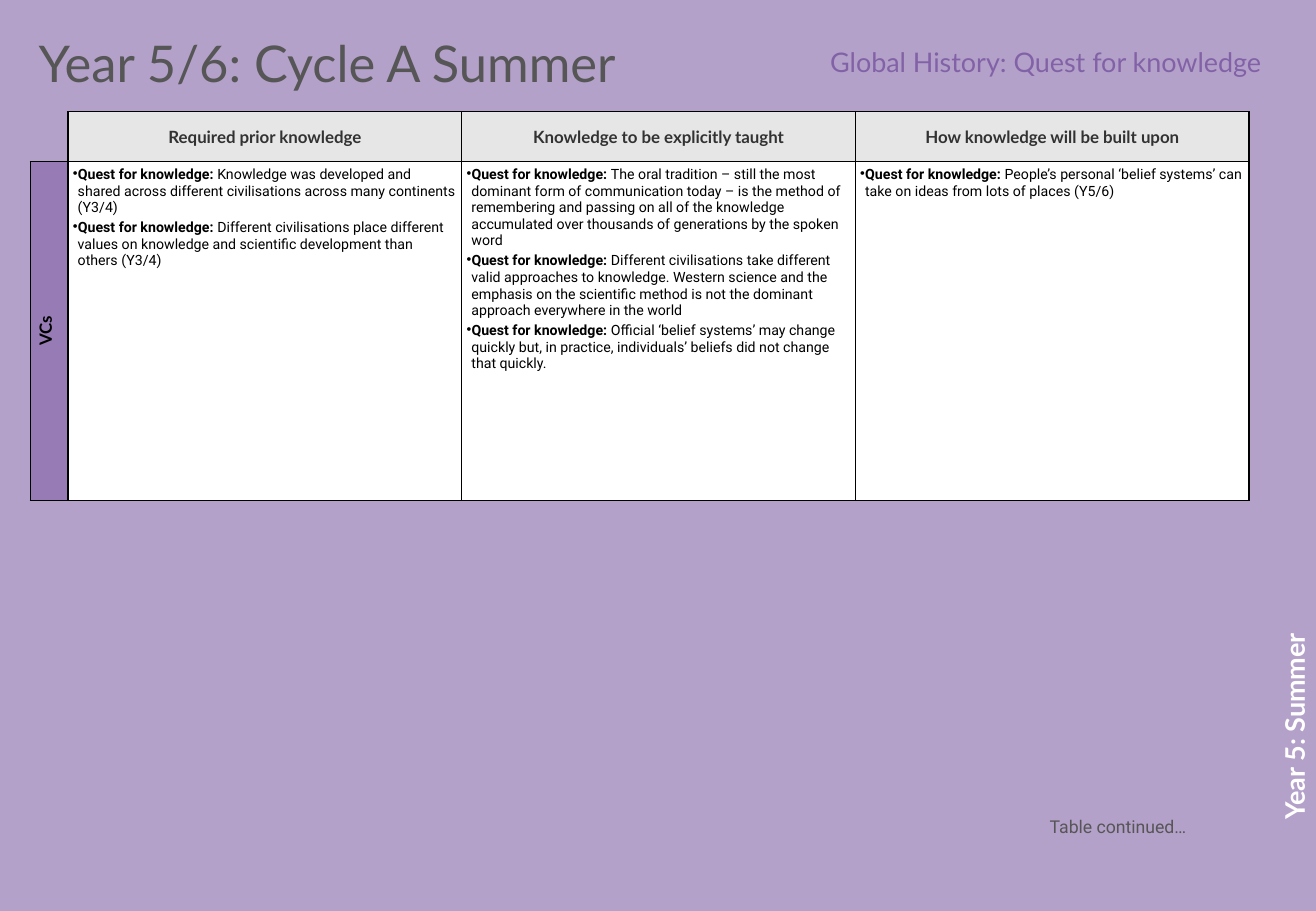
"""Build a curriculum slide with a knowledge table."""
from dataclasses import dataclass

import lxml.etree
import pptx
import pptx.dml.color
import pptx.enum.text
import pptx.oxml.ns
import pptx.util

Inches = pptx.util.Inches
Pt = pptx.util.Pt
Align = pptx.enum.text.PP_ALIGN
Anchor = pptx.enum.text.MSO_ANCHOR
qn = pptx.oxml.ns.qn


@dataclass(frozen=True)
class Theme:
    back: str = "B4A1CA"
    grey: str = "565656"
    dark: str = "323232"
    black: str = "000000"
    white: str = "FFFFFF"
    purple: str = "8262A6"
    pale: str = "E6E6E6"
    head: str = "Lato"
    body: str = "Roboto"
    title: float = 30
    topic: float = 16
    note: float = 10.5
    label: float = 10
    point: float = 8.4


@dataclass(frozen=True)
class Label:
    text: str
    box: tuple[float, float, float, float]
    size: float
    color: str
    font: str = "Lato"
    bold: bool = False
    align: Align = Align.LEFT
    anchor: Anchor = Anchor.MIDDLE
    turn: float = 0


@dataclass(frozen=True)
class Column:
    head: str
    points: tuple[str, ...]


THEME = Theme()
LEAD = "Quest for knowledge: "
LABELS = (
    Label("Year 5/6: Cycle A Summer", (0.22, 0.26, 6.62, 0.5), THEME.title, THEME.grey),
    Label("Year 5: Summer", (9.46, 5.81, 2.38, 0.34), THEME.topic, THEME.white,
          bold=True, align=Align.CENTER, turn=270),
    Label("Global History: Quest for knowledge", (5.47, 0.26, 5.01, 0.5),
          THEME.topic, THEME.purple, align=Align.RIGHT),
    Label("Table continued…", (8.54, 6.67, 1.42, 0.28), THEME.note, THEME.grey,
          font=THEME.body, anchor=Anchor.TOP),
)
COLUMNS = (
    Column("Required prior knowledge", (
        "Knowledge was developed and shared across different civilisations across "
        "many continents (Y3/4)",
        "Different civilisations place different values on knowledge and scientific "
        "development than others (Y3/4)",
    )),
    Column("Knowledge to be explicitly taught", (
        "The oral tradition – still the most dominant form of communication today – is "
        "the method of remembering and passing on all of the knowledge accumulated over "
        "thousands of generations by the spoken word",
        "Different civilisations take different valid approaches to knowledge. Western "
        "science and the emphasis on the scientific method is not the dominant approach "
        "everywhere in the world",
        "Official ‘belief systems’ may change quickly but, in practice, individuals’ "
        "beliefs did not change that quickly.",
    )),
    Column("How knowledge will be built upon", (
        "People’s personal ‘belief systems’ can take on ideas from lots of places (Y5/6)",
    )),
)


def rgb(color: str) -> pptx.dml.color.RGBColor:
    """Turn a hex string into a colour."""
    return pptx.dml.color.RGBColor.from_string(color)


def write(para, text: str, *, size: float, color: str, font: str = THEME.head,
          bold: bool = False, align: Align = Align.LEFT) -> None:
    """Add a formatted run to a paragraph."""
    para.alignment = align
    run = para.add_run()
    run.text = text
    run.font.size = Pt(size)
    run.font.name = font
    run.font.bold = bold
    run.font.color.rgb = rgb(color)


def place(slide, label: Label) -> None:
    """Draw one free label."""
    box = slide.shapes.add_textbox(*map(Inches, label.box))
    box.rotation = label.turn
    frame = box.text_frame
    frame.word_wrap = True
    frame.vertical_anchor = label.anchor
    write(frame.paragraphs[0], label.text, size=label.size, color=label.color,
          font=label.font, bold=label.bold, align=label.align)


def dress(cell, fill: str | None, sides: str = "LRTB") -> None:
    """Set the margins, fill and borders of a cell."""
    cell.margin_left = cell.margin_right = Inches(0.04)
    cell.margin_top = cell.margin_bottom = Inches(0.04)
    if fill:
        cell.fill.solid()
        cell.fill.fore_color.rgb = rgb(fill)
    else:
        cell.fill.background()
    props = cell._tc.get_or_add_tcPr()
    for spot, side in enumerate("LRTB"):
        line = lxml.etree.Element(qn(f"a:ln{side}"), w=str(Pt(1)))
        if side in sides:
            paint = lxml.etree.SubElement(line, qn("a:solidFill"))
            lxml.etree.SubElement(paint, qn("a:srgbClr"), val=THEME.black)
        else:
            lxml.etree.SubElement(line, qn("a:noFill"))
        props.insert(spot, line)


def head(cell, text: str, fill: str, color: str) -> None:
    """Fill a heading cell."""
    dress(cell, fill)
    cell.vertical_anchor = Anchor.MIDDLE
    write(cell.text_frame.paragraphs[0], text, size=THEME.label, color=color,
          bold=True, align=Align.CENTER)


def bullets(cell, points: tuple[str, ...]) -> None:
    """Fill a cell with bulleted points."""
    dress(cell, THEME.white)
    frame = cell.text_frame
    for index, point in enumerate(points):
        para = frame.add_paragraph() if index else frame.paragraphs[0]
        para.space_after = Pt(2)
        props = para._p.get_or_add_pPr()
        props.set("marL", str(Inches(0.04)))
        props.set("indent", str(-Inches(0.04)))
        lxml.etree.SubElement(props, qn("a:buChar"), char="•")
        for text, bold in ((LEAD, True), (point, False)):
            write(para, text, size=THEME.point, color=THEME.black,
                  font=THEME.body, bold=bold)


def chart(slide) -> None:
    """Draw the knowledge table."""
    frame = slide.shapes.add_table(2, len(COLUMNS) + 1, Inches(0.25), Inches(0.92),
                                   Inches(10.03), Inches(3.2))
    table = frame.table
    table.first_row = table.horz_banding = False
    for index, column in enumerate(table.columns):
        column.width = Inches(3.24 if index else 0.31)
    for row, height in zip(table.rows, (0.41, 2.79)):
        row.height = Inches(height)
    dress(table.cell(0, 0), None, "RB")
    side = table.cell(1, 0)
    head(side, "VCs", THEME.purple, THEME.black)
    props = side._tc.get_or_add_tcPr()
    props.set("vert", "vert270")
    tint = props.find(f"{qn('a:solidFill')}/{qn('a:srgbClr')}")
    lxml.etree.SubElement(tint, qn("a:alpha"), val="60000")
    for index, column in enumerate(COLUMNS, 1):
        head(table.cell(0, index), column.head, THEME.pale, THEME.dark)
        bullets(table.cell(1, index), column.points)


def main() -> None:
    """Build and save the slide."""
    deck = pptx.Presentation()
    deck.slide_width, deck.slide_height = Inches(10.83), Inches(7.5)
    slide = deck.slides.add_slide(deck.slide_layouts[6])
    slide.background.fill.solid()
    slide.background.fill.fore_color.rgb = rgb(THEME.back)
    for label in LABELS:
        place(slide, label)
    chart(slide)
    deck.save("out.pptx")


if __name__ == "__main__":
    main()
